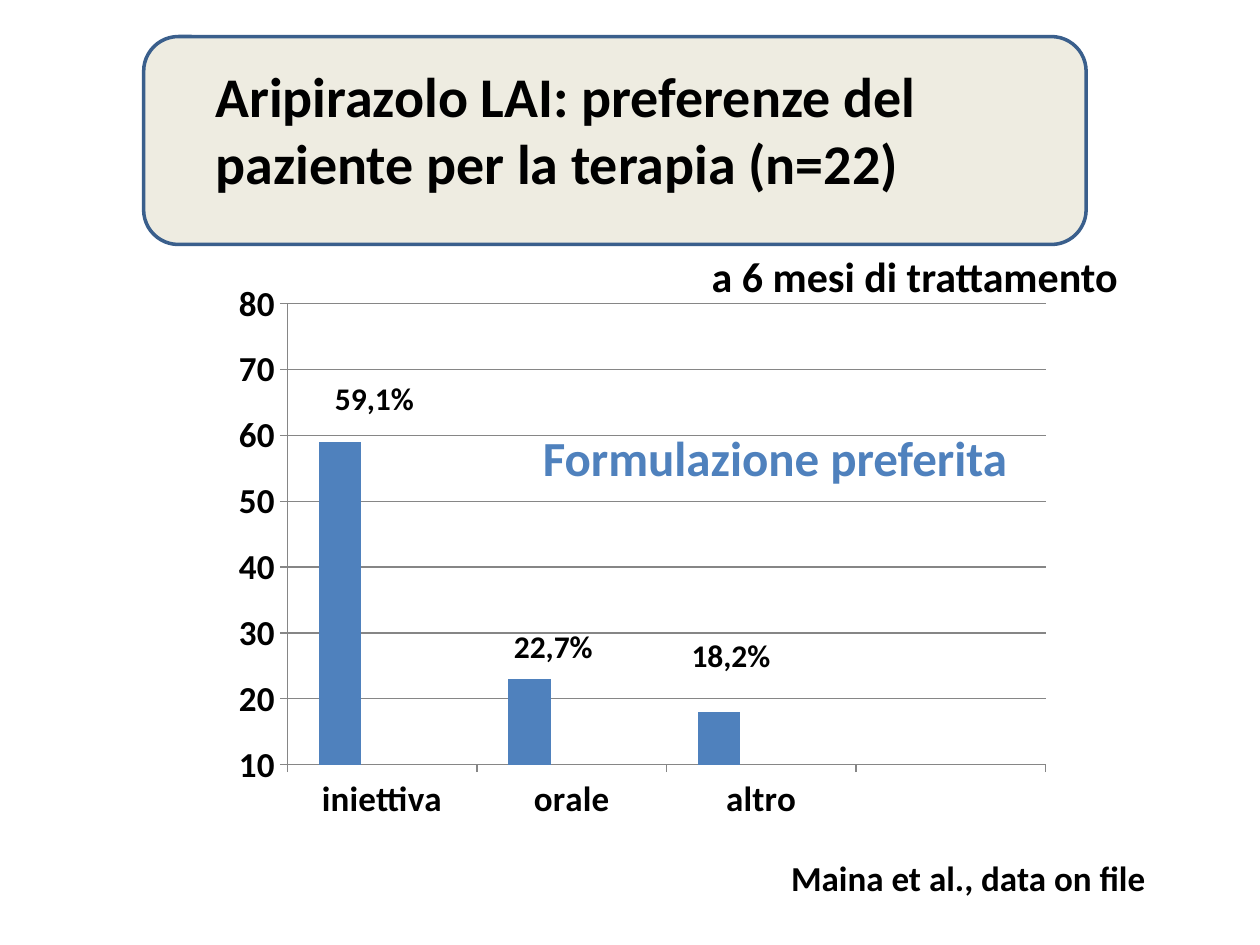
from lxml.etree import SubElement
from pptx import Presentation
from pptx.chart.data import CategoryChartData
from pptx.dml.color import RGBColor
from pptx.enum.chart import XL_CHART_TYPE, XL_TICK_MARK
from pptx.enum.shapes import MSO_SHAPE
from pptx.enum.text import MSO_ANCHOR, MSO_AUTO_SIZE, PP_ALIGN
from pptx.oxml.ns import qn
from pptx.util import Inches, Pt

FONT = "Calibri"
COLORS = {
    "text": "000000",
    "panel": "EEECE1",
    "panel_line": "3A5F8C",
    "grid": "868686",
    "blue": "4F81BD",
    "red": "C0504D",
    "green": "9BBB59",
}
CHART_AT = (1.77, 2.16, 6.67, 4.44)
PLOT_AT = (2.28, 2.41, 6.02, 3.66)


def rgb(name):
    return RGBColor.from_string(COLORS[name])


def box(*lengths):
    return [Inches(n) for n in lengths]


def style_font(font, size, color="text"):
    font.name = FONT
    font.size = Pt(size)
    font.bold = True
    font.color.rgb = rgb(color)


def add_text(s, text, at, size, color="text", wrap=True):
    tf = s.shapes.add_textbox(*box(*at)).text_frame
    tf.word_wrap = wrap
    tf.text = text
    style_font(tf.paragraphs[0].runs[0].font, size, color)


def add_title(s, text):
    title = s.shapes.title
    title.left, title.top, title.width, title.height = box(1.61, 0.44, 7.32, 1.72)
    tf = title.text_frame
    tf.text = text
    tf.word_wrap = True
    tf.auto_size = MSO_AUTO_SIZE.NONE
    tf.vertical_anchor = MSO_ANCHOR.TOP
    p = tf.paragraphs[0]
    p.alignment = PP_ALIGN.LEFT
    style_font(p.runs[0].font, 32)

    # Rounded panel behind the title
    panel = s.shapes.add_shape(MSO_SHAPE.ROUNDED_RECTANGLE, *box(1.14, 0.29, 7.48, 1.65))
    panel.shadow.inherit = False
    panel.fill.solid()
    panel.fill.fore_color.rgb = rgb("panel")
    panel.line.color.rgb = rgb("panel_line")
    panel.line.width = Pt(2)
    title.element.addprevious(panel.element)


def set_plot_layout(chart):
    plot_area = chart.element.find(".//" + qn("c:plotArea"))
    layout = plot_area.find(qn("c:layout"))
    if layout is None:
        layout = SubElement(plot_area, qn("c:layout"))
        plot_area.insert(0, layout)
    manual = SubElement(layout, qn("c:manualLayout"))
    left, top, width, height = CHART_AT
    x, y, w, h = PLOT_AT
    settings = {
        "layoutTarget": "inner",
        "xMode": "edge",
        "yMode": "edge",
        "x": (x - left) / width,
        "y": (y - top) / height,
        "w": w / width,
        "h": h / height,
    }
    for tag, value in settings.items():
        SubElement(manual, qn("c:" + tag)).set("val", str(value))


def add_preference_chart(s):
    data = CategoryChartData()
    data.categories = ["iniettiva", "orale", "altro", ""]
    data.add_series("Series 1", [59, 23, 18, None])
    data.add_series("Series 2", [None] * 4)
    data.add_series("Series 3", [None] * 4)
    chart = s.shapes.add_chart(
        XL_CHART_TYPE.COLUMN_CLUSTERED, *box(*CHART_AT), data
    ).chart
    chart.has_legend = False
    chart.has_title = False
    style_font(chart.font, 20)

    plot = chart.plots[0]
    plot.gap_width = 150
    plot.overlap = 0
    plot.vary_by_categories = False
    for series, color in zip(plot.series, ("blue", "red", "green")):
        series.format.fill.solid()
        series.format.fill.fore_color.rgb = rgb(color)

    # Axes and gridlines
    values = chart.value_axis
    values.minimum_scale, values.maximum_scale, values.major_unit = 10, 80, 10
    values.has_major_gridlines = True
    for axis in (chart.category_axis, values):
        axis.major_tick_mark = XL_TICK_MARK.OUTSIDE
        axis.format.line.color.rgb = rgb("grid")
    values.major_gridlines.format.line.color.rgb = rgb("grid")
    set_plot_layout(chart)


def main():
    prs = Presentation()
    prs.slide_width, prs.slide_height = box(10, 7.5)
    s = prs.slides.add_slide(prs.slide_layouts[5])

    add_title(s, "Aripirazolo LAI: preferenze del paziente per la terapia (n=22)")
    add_preference_chart(s)

    # Percentages above the bars
    for text, left, top in (
        ("59,1%", 2.56, 2.96),
        ("22,7%", 3.98, 4.93),
        ("18,2%", 5.39, 5),
    ):
        add_text(s, text, (left, top, 1.34, 0.4), 18)

    # Captions and source
    add_text(s, "a 6 mesi di trattamento", (5.55, 1.94, 3.7, 0.5), 24)
    add_text(s, "Formulazione preferita", (4.21, 3.34, 3.93, 0.57), 28, "blue", wrap=False)
    add_text(s, "Maina et al., data on file", (6.18, 6.75, 3.39, 0.44), 20)

    prs.save("out.pptx")


if __name__ == "__main__":
    main()
